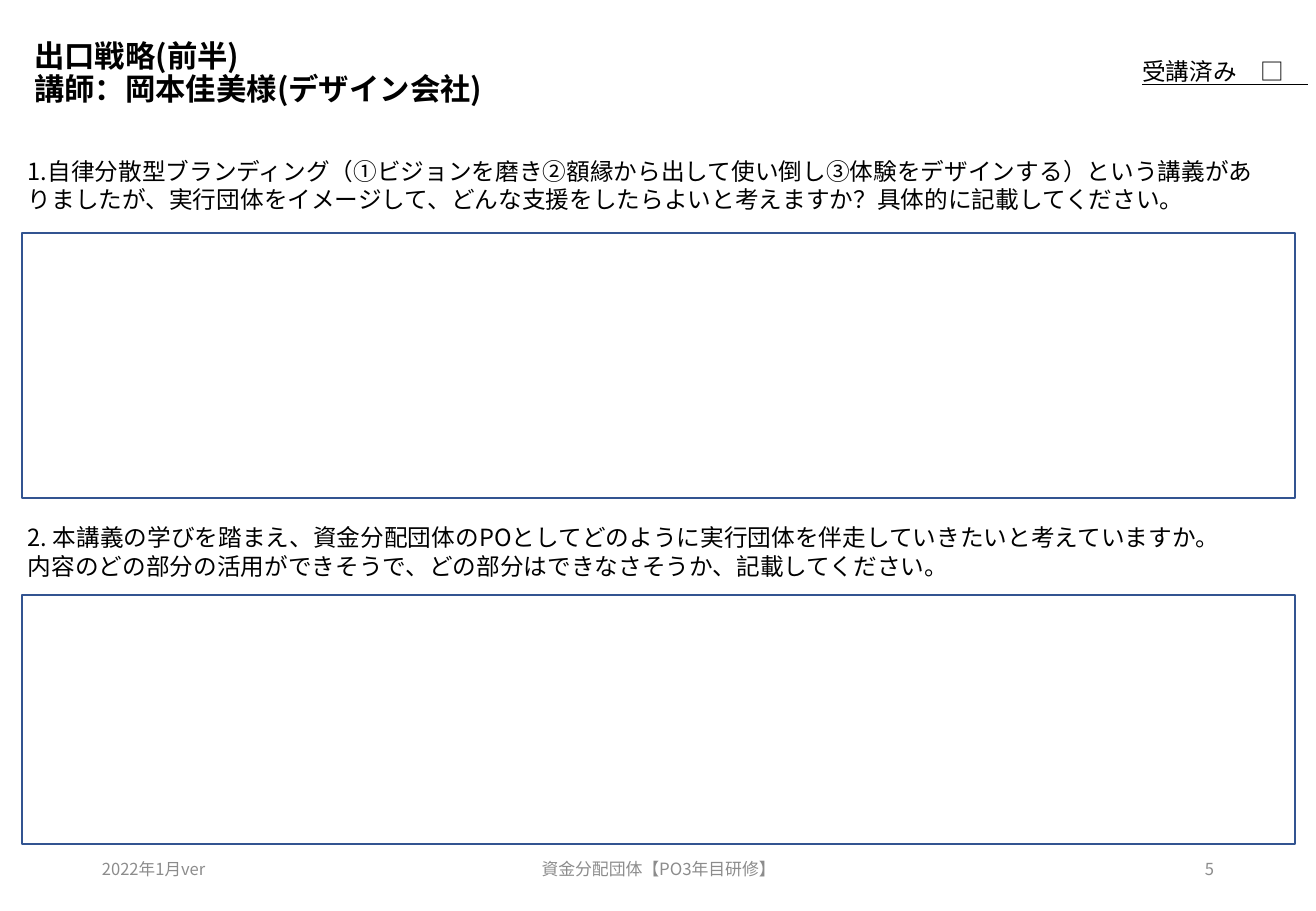
"""Build the exit strategy worksheet slide with two questions and answer boxes."""
import pptx
import pptx.util
import pptx.dml.color
import pptx.enum.shapes
import pptx.enum.text
import pptx.oxml.ns
import lxml.etree

Inches = pptx.util.Inches
ALIGN = pptx.enum.text.PP_ALIGN
ANCHOR = pptx.enum.text.MSO_ANCHOR
FONT = "Noto Sans CJK JP"


def rgb(color):
    return pptx.dml.color.RGBColor.from_string(color)


def write(sp, text, size=14, color="000000", bold=False, underline=False,
          align=ALIGN.LEFT, anchor=ANCHOR.TOP, spacing=1.0):
    tf = sp.text_frame
    tf.word_wrap = True
    tf.auto_size = pptx.enum.text.MSO_AUTO_SIZE.NONE
    tf.vertical_anchor = anchor
    tf.text = text
    for p in tf.paragraphs:
        p.alignment = align
        p.line_spacing = spacing
        for r in p.runs:
            r.font.size = pptx.util.Pt(size)
            r.font.bold = bold
            r.font.underline = underline
            r.font.color.rgb = rgb(color)
            r.font.name = FONT
            ea = lxml.etree.SubElement(r._r.get_or_add_rPr(), pptx.oxml.ns.qn("a:ea"))
            ea.set("typeface", FONT)


prs = pptx.Presentation()
prs.slide_width = Inches(10.83)
prs.slide_height = Inches(7.5)
s = prs.slides.add_slide(prs.slide_layouts[5])

title = s.shapes.title
title.left, title.top = Inches(0.18), Inches(0.15)
title.width, title.height = Inches(9.34), Inches(0.92)
write(title, "出口戦略(前半)\v講師：岡本佳美様(デザイン会社)", size=18, bold=True,
      anchor=ANCHOR.MIDDLE, spacing=0.9)

for top, height in [(1.92, 2.18), (4.9, 2.05)]:
    sp = s.shapes.add_shape(pptx.enum.shapes.MSO_SHAPE.RECTANGLE,
                            Inches(0.18), Inches(top), Inches(10.48), Inches(height))
    sp.shadow.inherit = False
    sp.fill.solid()
    sp.fill.fore_color.rgb = rgb("FFFFFF")
    sp.line.color.rgb = rgb("325491")
    sp.line.width = pptx.util.Pt(1)

questions = [
    (1.24, 10.39, "1.自律分散型ブランディング（①ビジョンを磨き②額縁から出して使い倒し③体験をデザインする）"
     "という講義がありましたが、実行団体をイメージして、どんな支援をしたらよいと考えますか？"
     "具体的に記載してください。"),
    (4.26, 10.48, "2. 本講義の学びを踏まえ、資金分配団体のPOとしてどのように実行団体を伴走していきたいと考えていますか。\n"
     "内容のどの部分の活用ができそうで、どの部分はできなさそうか、記載してください。"),
]
for top, width, text in questions:
    sp = s.shapes.add_textbox(Inches(0.13), Inches(top), Inches(width), Inches(0.57))
    write(sp, text)

footers = [
    (0.74, 2.44, "2022年1月ver", 9.8, ALIGN.LEFT),
    (3.59, 3.66, "資金分配団体【PO3年目研修】", 10, ALIGN.CENTER),
    (7.65, 2.44, "5", 9.8, ALIGN.RIGHT),
]
for left, width, text, size, align in footers:
    sp = s.shapes.add_textbox(Inches(left), Inches(6.95), Inches(width), Inches(0.4))
    write(sp, text, size=size, color="8C8C8C", align=align, anchor=ANCHOR.MIDDLE)

sp = s.shapes.add_textbox(Inches(9.3), Inches(0.42), Inches(2.01), Inches(0.34))
write(sp, "受講済み　□　", underline=True)

prs.save("out.pptx")
